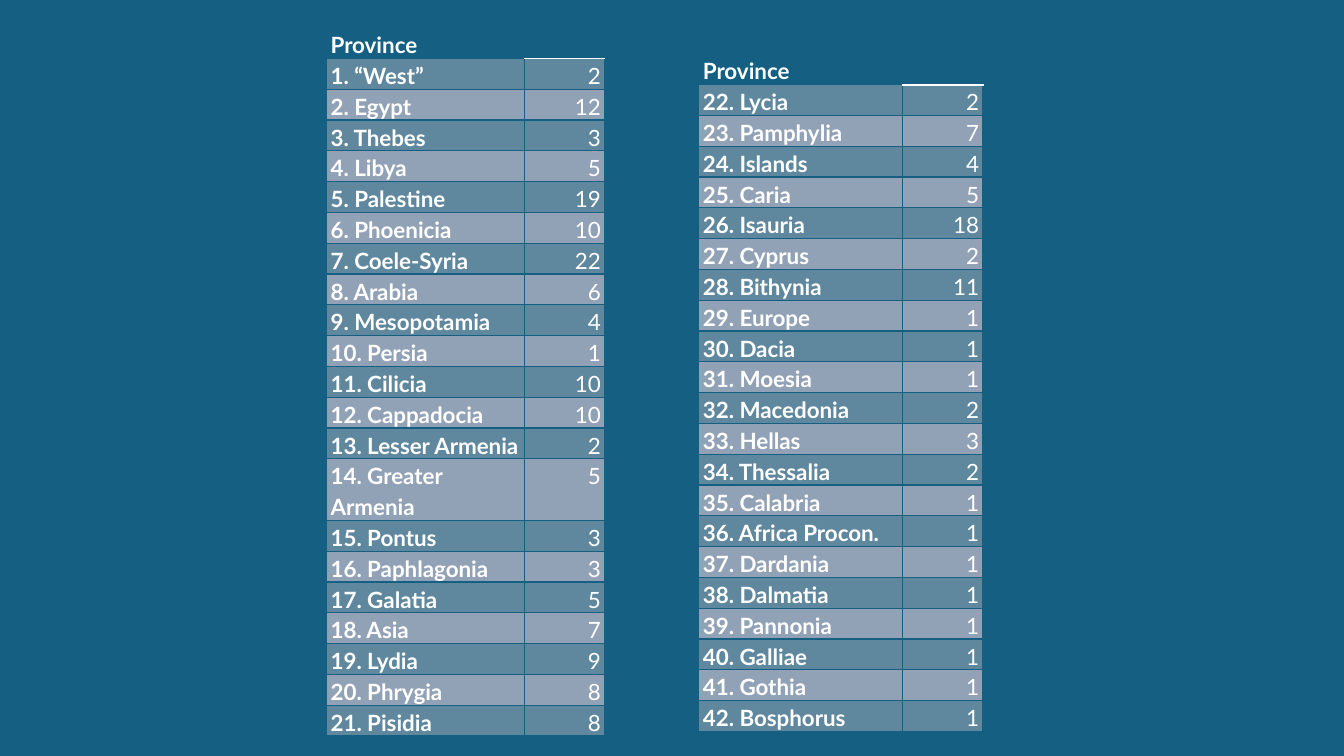
from pptx import Presentation, util as u
from pptx.dml.color import RGBColor
from pptx.enum import text as t
from pptx.oxml import parse_xml
from pptx.oxml.ns import nsdecls

COLORS = {"sea": "156082", "odd": "5F889E", "even": "92A2B6", "white": "FFFFFF"}
WEST_TO_PISIDIA = [
    ("“West”", 2), ("Egypt", 12), ("Thebes", 3), ("Libya", 5), ("Palestine", 19),
    ("Phoenicia", 10), ("Coele-Syria", 22), ("Arabia", 6), ("Mesopotamia", 4),
    ("Persia", 1), ("Cilicia", 10), ("Cappadocia", 10), ("Lesser Armenia", 2),
    ("Greater Armenia", 5), ("Pontus", 3), ("Paphlagonia", 3), ("Galatia", 5),
    ("Asia", 7), ("Lydia", 9), ("Phrygia", 8), ("Pisidia", 8),
]
LYCIA_TO_BOSPHORUS = [
    ("Lycia", 2), ("Pamphylia", 7), ("Islands", 4), ("Caria", 5), ("Isauria", 18),
    ("Cyprus", 2), ("Bithynia", 11), ("Europe", 1), ("Dacia", 1), ("Moesia", 1),
    ("Macedonia", 2), ("Hellas", 3), ("Thessalia", 2), ("Calabria", 1),
    ("Africa Procon.", 1), ("Dardania", 1), ("Dalmatia", 1), ("Pannonia", 1),
    ("Galliae", 1), ("Gothia", 1), ("Bosphorus", 1),
]


class ProvinceSlide:
    """Holds the style and the slide; lengths are percent of the slide's size."""

    HEADER_HEIGHT, ROW_HEIGHT, COUNT_WIDTH = 7.47, 4, 6
    FONT = {"name": "Lato", "size": u.Pt(16)}
    CELL = {"margin_left": u.Inches(0.04), "margin_right": u.Inches(0.04),
            "margin_top": 0, "margin_bottom": 0}

    def __init__(self, deck):
        self.width, self.height = deck.slide_width, deck.slide_height
        self.slide = deck.slides.add_slide(deck.slide_layouts[6])
        backdrop = self.slide.background.fill
        backdrop.solid()
        backdrop.fore_color.rgb = self.rgb("sea")

    def rgb(self, color):
        return RGBColor.from_string(COLORS[color])

    def x(self, percent):
        return round(self.width * percent / 100)

    def y(self, percent):
        return round(self.height * percent / 100)

    def apply(self, target, values):
        for key, value in values.items():
            setattr(target, key, value)

    def borders(self, cell, **accents):
        """Draw sea-coloured edges, white where an accent names the side."""
        for place, side in enumerate("LRTB"):
            color = accents.get(side, "sea")
            points = 1.5 if side in accents else 1
            cell._tc.get_or_add_tcPr().insert(place, parse_xml(
                f'<a:ln{side} {nsdecls("a")} w="{u.Pt(points)}"><a:solidFill>'
                f'<a:srgbClr val="{COLORS[color]}"/></a:solidFill></a:ln{side}>'))

    def cell(self, cell, words, fill, bold=True, align=t.PP_ALIGN.LEFT,
             anchor=t.MSO_ANCHOR.TOP, spacing=1.15, **accents):
        self.apply(cell, {**self.CELL, "vertical_anchor": anchor})
        cell.fill.solid()
        cell.fill.fore_color.rgb = self.rgb(fill)
        self.borders(cell, **accents)
        if words:
            line = cell.text_frame.paragraphs[0]
            self.apply(line, {"alignment": align, "line_spacing": spacing,
                              "space_after": u.Pt(8)})
            run = line.add_run()
            run.text = words
            self.apply(run.font, {**self.FONT, "bold": bold})
            run.font.color.rgb = self.rgb("white")

    def table(self, left, top, name_width, first, provinces, header_spacing):
        widths = name_width, self.COUNT_WIDTH
        heights = [self.HEADER_HEIGHT] + [self.ROW_HEIGHT] * len(provinces)
        table = self.slide.shapes.add_table(
            len(heights), 2, self.x(left), self.y(top),
            self.x(sum(widths)), self.y(sum(heights))).table
        for column, width in zip(table.columns, widths):
            column.width = self.x(width)
        for row, height in zip(table.rows, heights):
            row.height = self.y(height)

        self.cell(table.cell(0, 0), "Province", "sea",
                  anchor=t.MSO_ANCHOR.BOTTOM, spacing=header_spacing)
        self.cell(table.cell(0, 1), "", "sea", B="white")
        for row, (province, count) in enumerate(provinces, 1):
            fill = "odd" if row % 2 else "even"
            accents = {"T": "white"} if row == 1 else {}
            self.cell(table.cell(row, 0), f"{first + row - 1}. {province}", fill)
            self.cell(table.cell(row, 1), str(count), fill, bold=False,
                      align=t.PP_ALIGN.RIGHT, **accents)


def main():
    deck = Presentation()
    deck.slide_width, deck.slide_height = u.Inches(13.33), u.Inches(7.5)
    page = ProvinceSlide(deck)
    page.table(24.3, 0.27, 14.7, 1, WEST_TO_PISIDIA, header_spacing=1.0)
    page.table(52, 3.73, 15.15, 22, LYCIA_TO_BOSPHORUS, header_spacing=1.15)
    deck.save("out.pptx")


if __name__ == "__main__":
    main()
